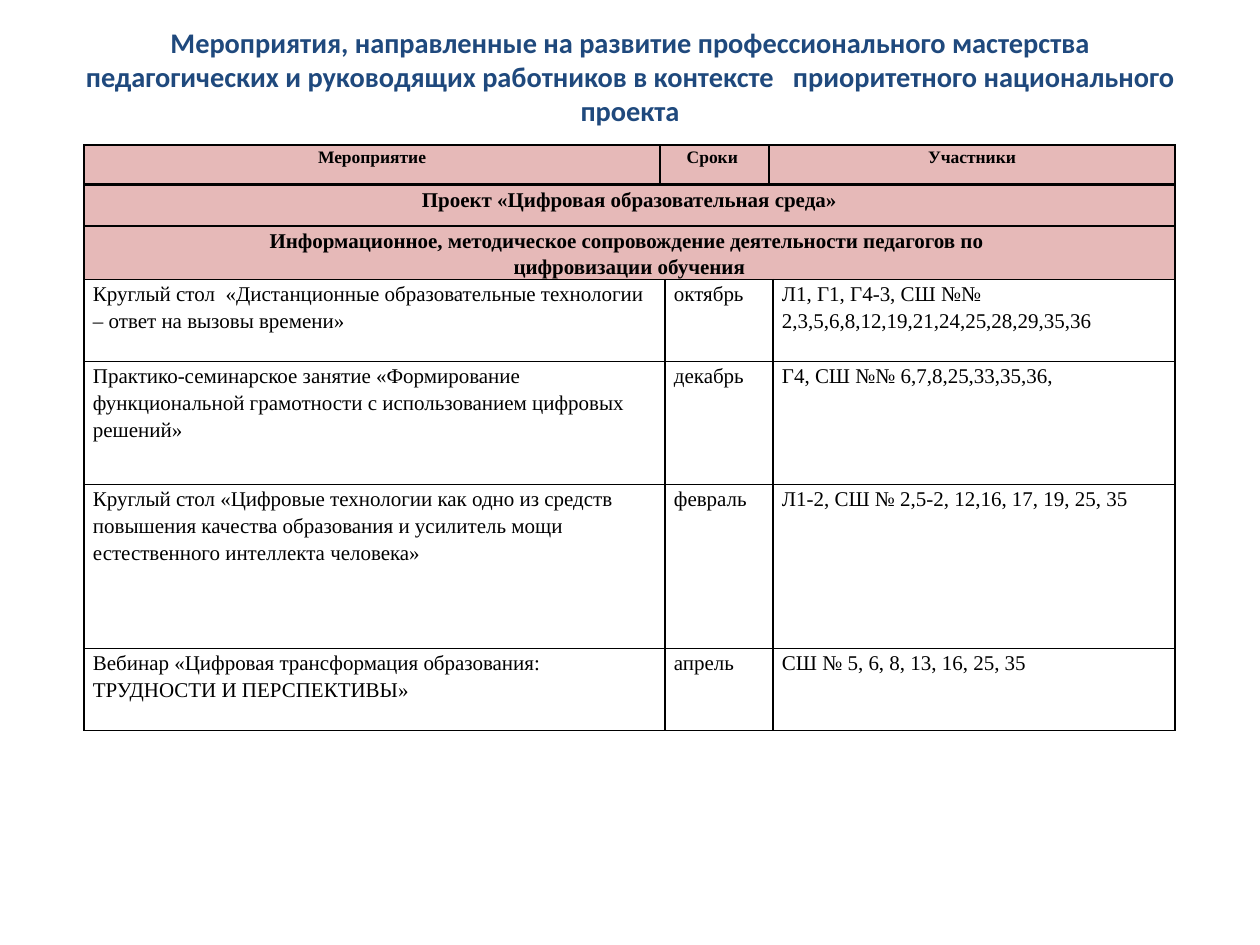
import pptx
import pptx.util
import pptx.dml.color
import pptx.enum.text
import pptx.oxml
import pptx.oxml.ns

PX = 914400 / 126
COLORS = {"title": "1F497D", "text": "000000", "head": "E6B9B8", "border": "000000"}
ALIGN = pptx.enum.text.PP_ALIGN

TITLE = ("Мероприятия, направленные на развитие профессионального мастерства "
         "педагогических и руководящих работников в контексте   приоритетного национального проекта")
HEADINGS = ["Мероприятие", "Сроки ", "Участники"]
SECTIONS = [
    "Проект «Цифровая образовательная среда»",
    "Информационное, методическое сопровождение деятельности педагогов по \nцифровизации обучения",
]
EVENTS = [
    ("Круглый стол  «Дистанционные образовательные технологии – ответ на вызовы времени»",
     "октябрь", "Л1, Г1, Г4-3, СШ №№ 2,3,5,6,8,12,19,21,24,25,28,29,35,36"),
    ("Практико-семинарское занятие «Формирование функциональной грамотности с использованием цифровых решений»",
     "декабрь", "Г4, СШ №№ 6,7,8,25,33,35,36,"),
    ("Круглый стол «Цифровые технологии как одно из средств повышения качества образования "
     "и усилитель мощи естественного интеллекта человека»",
     "февраль", "Л1-2, СШ № 2,5-2, 12,16, 17, 19, 25, 35"),
    ("Вебинар «Цифровая трансформация образования: ТРУДНОСТИ И ПЕРСПЕКТИВЫ»",
     "апрель", "СШ № 5, 6, 8, 13, 16, 25, 35"),
]


def emu(px):
    """Turn px into EMU."""
    return pptx.util.Emu(round(px * PX))


def rgb(name):
    """Return the named colour."""
    return pptx.dml.color.RGBColor.from_string(COLORS[name])


def format_text(tf, font, size, color, bold, align):
    """Format every paragraph and run of a text frame."""
    for p in tf.paragraphs:
        p.alignment = align
        for r in p.runs:
            r.font.name = font
            r.font.size = pptx.util.Pt(size)
            r.font.bold = bold
            r.font.color.rgb = rgb(color)


def add_borders(cell):
    """Draw a thin line on all four sides of a cell."""
    tc_pr = cell._tc.get_or_add_tcPr()
    for side in "LRTB":
        tc_pr.append(pptx.oxml.parse_xml(
            f'<a:ln{side} {pptx.oxml.ns.nsdecls("a")} w="12700"><a:solidFill>'
            f'<a:srgbClr val="{COLORS["border"]}"/></a:solidFill></a:ln{side}>'))


def fill_cell(cell, text, size, head):
    """Write and format one cell as a heading or as body text."""
    cell.margin_left = cell.margin_right = emu(9)
    cell.margin_top = cell.margin_bottom = 0
    add_borders(cell)
    if head:
        cell.fill.solid()
        cell.fill.fore_color.rgb = rgb("head")
    else:
        cell.fill.background()
    tf = cell.text_frame
    tf.text = text
    format_text(tf, "Times New Roman", size, "text", head, ALIGN.CENTER if head else ALIGN.LEFT)
    for p in tf.paragraphs:
        p.line_spacing = 1.15


def add_grid(s, left, top, widths, heights):
    """Add a table with the given column widths and row heights."""
    box = [emu(v) for v in (left, top, sum(widths), sum(heights))]
    table = s.shapes.add_table(len(heights), len(widths), *box).table
    table.first_row = table.horz_banding = False
    for col, width in zip(table.columns, widths):
        col.width = emu(width)
    for row, height in zip(table.rows, heights):
        row.height = emu(height)
    return table


def add_title(s, left, top, width, height):
    """Place the slide title."""
    sp = s.shapes.title
    sp.left, sp.top, sp.width, sp.height = map(emu, (left, top, width, height))
    tf = sp.text_frame
    tf.text = TITLE
    tf.word_wrap = True
    tf.auto_size = pptx.enum.text.MSO_AUTO_SIZE.NONE
    tf.vertical_anchor = pptx.enum.text.MSO_ANCHOR.MIDDLE
    format_text(tf, "Calibri", 16.2, "title", True, ALIGN.CENTER)


def add_headings(s, left, top):
    """Place the one-row table of column headings."""
    table = add_grid(s, left, top, [576, 109, 406], [39])
    for cell, text in zip(table.iter_cells(), HEADINGS):
        fill_cell(cell, text, 10, True)


def add_events(s, left, top):
    """Place the table of section rows and events."""
    line = 41
    heights = [line, 53] + [line * n for n in (2, 3, 4, 2)]
    table = add_grid(s, left, top, [581, 108, 402], heights)
    rows = [(text, "", "") for text in SECTIONS] + EVENTS
    for i, row in enumerate(rows):
        head = i < len(SECTIONS)
        for j, text in enumerate(row):
            fill_cell(table.cell(i, j), text, 12, head)
        if head:
            table.cell(i, 0).merge(table.cell(i, 2))


def main():
    """Build and save the slide."""
    prs = pptx.Presentation()
    prs.slide_width, prs.slide_height = emu(1260), emu(945)
    s = prs.slides.add_slide(prs.slide_layouts[5])
    add_title(s, 63, 38, 1134, 77)
    add_headings(s, 84, 145)
    add_events(s, 84, 185)
    prs.save("out.pptx")


if __name__ == "__main__":
    main()
